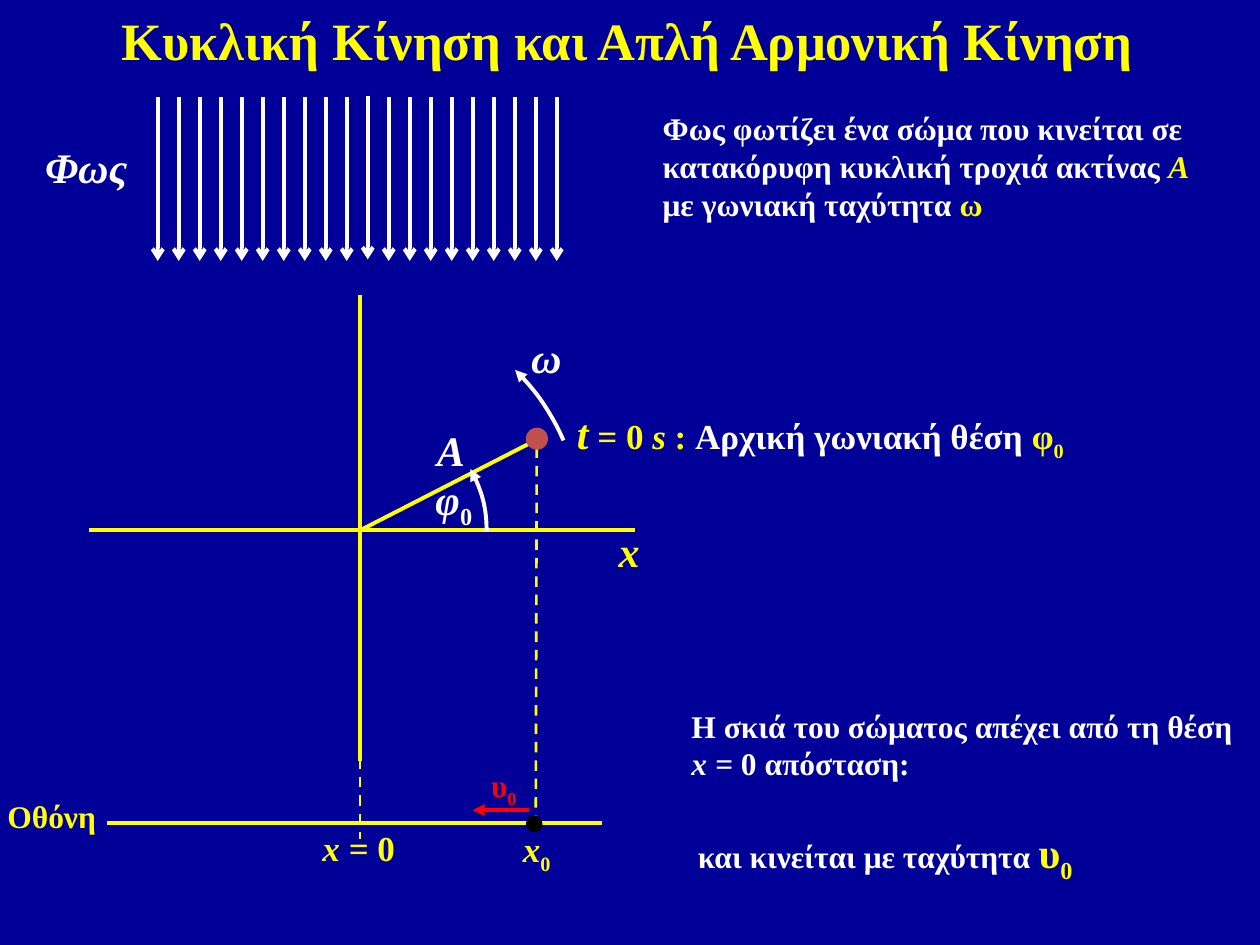
"""Build a slide on circular motion and simple harmonic motion."""
import pptx
import pptx.dml.color
import pptx.enum.dml
import pptx.enum.shapes
import pptx.enum.text
import pptx.oxml
import pptx.oxml.ns
import pptx.util

Cm = pptx.util.Cm
Pt = pptx.util.Pt
SHAPE = pptx.enum.shapes.MSO_SHAPE
FONT = "Times New Roman"
NAVY, GOLD, WHITE, RED, BRICK, BLACK = (
    "000099", "FFFF00", "FFFFFF", "FF0000", "C0504D", "000000")

TITLE = "Κυκλική Κίνηση και Απλή Αρμονική Κίνηση"

LABELS = [
    ((8.56, 8.43, 1.09, 1.27), [("Α", 24, WHITE, "i")]),
    ((12.22, 10.46, 0.94, 1.3), [("x", 24, GOLD, "i")]),
    ((0.66, 2.72, 2.18, 1.27), [("Φως", 24, WHITE, "i")]),
    ((6.25, 16.54, 2.16, 1.12), [("x = ", 20, GOLD, "i"), ("0", 20, GOLD, "")]),
    ((10.46, 6.55, 1.14, 1.27), [("ω", 24, WHITE, "i")]),
    ((8.53, 9.42, 1.3, 1.3), [("φ", 24, WHITE, "i"), ("0", 24, WHITE, "s")]),
    ((10.29, 16.56, 1.3, 1.12), [("x", 20, GOLD, "i"), ("0", 20, GOLD, "s")]),
    ((-0.1, 15.95, 2.31, 1.02), [("Οθόνη", 18, GOLD, "")]),
    ((9.65, 15.32, 1.07, 1.02), [("υ", 18, RED, ""), ("0", 18, RED, "s")]),
    ((13.82, 16.54, 8.48, 1.27), [
        ("και κινείται με ταχύτητα ", 18, WHITE, ""),
        ("υ", 24, GOLD, ""), ("0", 24, GOLD, "s")]),
]
NOTES = [
    ((13.11, 2.08, 11.61, 2.57), [
        ("Φως φωτίζει ένα σώμα που κινείται σε κατακόρυφη κυκλική "
         "τροχιά ακτίνας ", 18, WHITE, ""),
        ("Α", 18, GOLD, "i"), (" με γωνιακή ταχύτητα ", 18, WHITE, ""),
        ("ω", 18, GOLD, "")]),
    ((11.38, 8.1, 12.12, 1.27), [
        ("t", 24, GOLD, "i"), (" = ", 20, GOLD, "i"), ("0 ", 20, GOLD, ""),
        ("s ", 20, GOLD, "i"), (": ", 20, GOLD, ""),
        ("Αρχική γωνιακή θέση ", 20, WHITE, ""),
        ("φ", 20, GOLD, ""), ("0", 20, GOLD, "s")]),
    ((13.69, 14.12, 11.61, 1.8), [
        ("Η σκιά του σώματος απέχει από τη θέση ", 18, WHITE, ""),
        ("x = ", 18, WHITE, "i"), ("0 απόσταση:", 18, WHITE, "")]),
]
LINES = [
    ((1.8, 10.69, 12.8, 10.69), {}),
    ((7.26, 5.94, 7.26, 15.34), {}),
    ((2.16, 16.59, 12.14, 16.59), {}),
    ((7.26, 10.69, 10.77, 8.89), {}),
    ((10.82, 9.02, 10.8, 16.61), {"width": 1.5, "dash": True}),
    ((7.26, 12.32, 7.26, 16.92), {"width": 1.5, "dash": True}),
    ((10.67, 16.33, 9.53, 16.33), {"color": RED, "tail": "triangle"}),
]
RAYS, LEFT, STEP, TOP, DROP = 20, 3.18, 2.54 / 6, 1.96, 3.3
ARCS = [(2.74, 6.17, 8.99, 188.7, 201.96), (4.7, 8.15, 5.11, 198.45, 0.12)]
DOTS = [(10.62, 8.64, 0.41, BRICK), (10.62, 16.46, 0.3, BLACK)]


def rgb(code):
    return pptx.dml.color.RGBColor.from_string(code)


def add_tip(shape, end, kind):
    line = shape._element.spPr.get_or_add_ln()
    tag = pptx.oxml.ns.qn(f"a:{end}End")
    line.append(line.makeelement(tag, {"type": kind}))


def add_text(slide, box, runs, wrap=True, grow=True, mid=False):
    frame = slide.shapes.add_textbox(*map(Cm, box)).text_frame
    frame.word_wrap = wrap
    para = frame.paragraphs[0]
    if grow:
        frame.auto_size = pptx.enum.text.MSO_AUTO_SIZE.SHAPE_TO_FIT_TEXT
    if mid:
        frame.vertical_anchor = pptx.enum.text.MSO_ANCHOR.MIDDLE
        para.alignment = pptx.enum.text.PP_ALIGN.CENTER
        para.line_spacing = 0.9
    for words, size, color, style in runs:
        run = para.add_run()
        run.text = words
        font = run.font
        font.name, font.size, font.bold = FONT, Pt(size), True
        font.italic = "i" in style
        font.color.rgb = rgb(color)
        if "s" in style:
            run._r.get_or_add_rPr().set("baseline", "-25000")


def add_line(slide, ends, color=GOLD, width=2.25, dash=False, tail=None):
    link = slide.shapes.add_connector(
        pptx.enum.shapes.MSO_CONNECTOR.STRAIGHT, *map(Cm, ends))
    link.line.color.rgb = rgb(color)
    link.line.width = Pt(width)
    if dash:
        link.line.dash_style = pptx.enum.dml.MSO_LINE.DASH
    if tail:
        add_tip(link, "tail", tail)
    props = link._element.spPr
    props.append(props.makeelement(pptx.oxml.ns.qn("a:effectLst"), {}))


def add_round(slide, kind, left, top, size, color, width):
    shape = slide.shapes.add_shape(kind, *map(Cm, (left, top, size, size)))
    shape.shadow.inherit = False
    shape.line.color.rgb = rgb(color)
    shape.line.width = Pt(width)
    return shape


def main():
    deck = pptx.Presentation()
    deck.slide_width, deck.slide_height = Cm(25.4), Cm(19.05)
    slide = deck.slides.add_slide(deck.slide_layouts[6])
    slide.background.fill.solid()
    slide.background.fill.fore_color.rgb = rgb(NAVY)

    add_text(slide, (0.1, 0.33, 25.1, 1.09), [(TITLE, 30, GOLD, "")],
             grow=False, mid=True)
    for num in range(RAYS):
        x = LEFT + num * STEP
        y = TOP - 0.03 * (num == 10)
        add_line(slide, (x, y, x, y + DROP), color=WHITE, tail="arrow")
    for ends, look in LINES:
        add_line(slide, ends, **look)
    for left, top, size, start, stop in ARCS:
        arc = add_round(slide, SHAPE.ARC, left, top, size, WHITE, 2.25)
        arc.fill.background()
        arc.adjustments[0], arc.adjustments[1] = start, stop
        add_tip(arc, "head", "triangle")
    for left, top, size, color in DOTS:
        dot = add_round(slide, SHAPE.OVAL, left, top, size, color, 1)
        dot.fill.solid()
        dot.fill.fore_color.rgb = rgb(color)
    for box, runs in LABELS:
        add_text(slide, box, runs, wrap=False)
    for box, runs in NOTES:
        add_text(slide, box, runs)
    deck.save("out.pptx")


if __name__ == "__main__":
    main()
